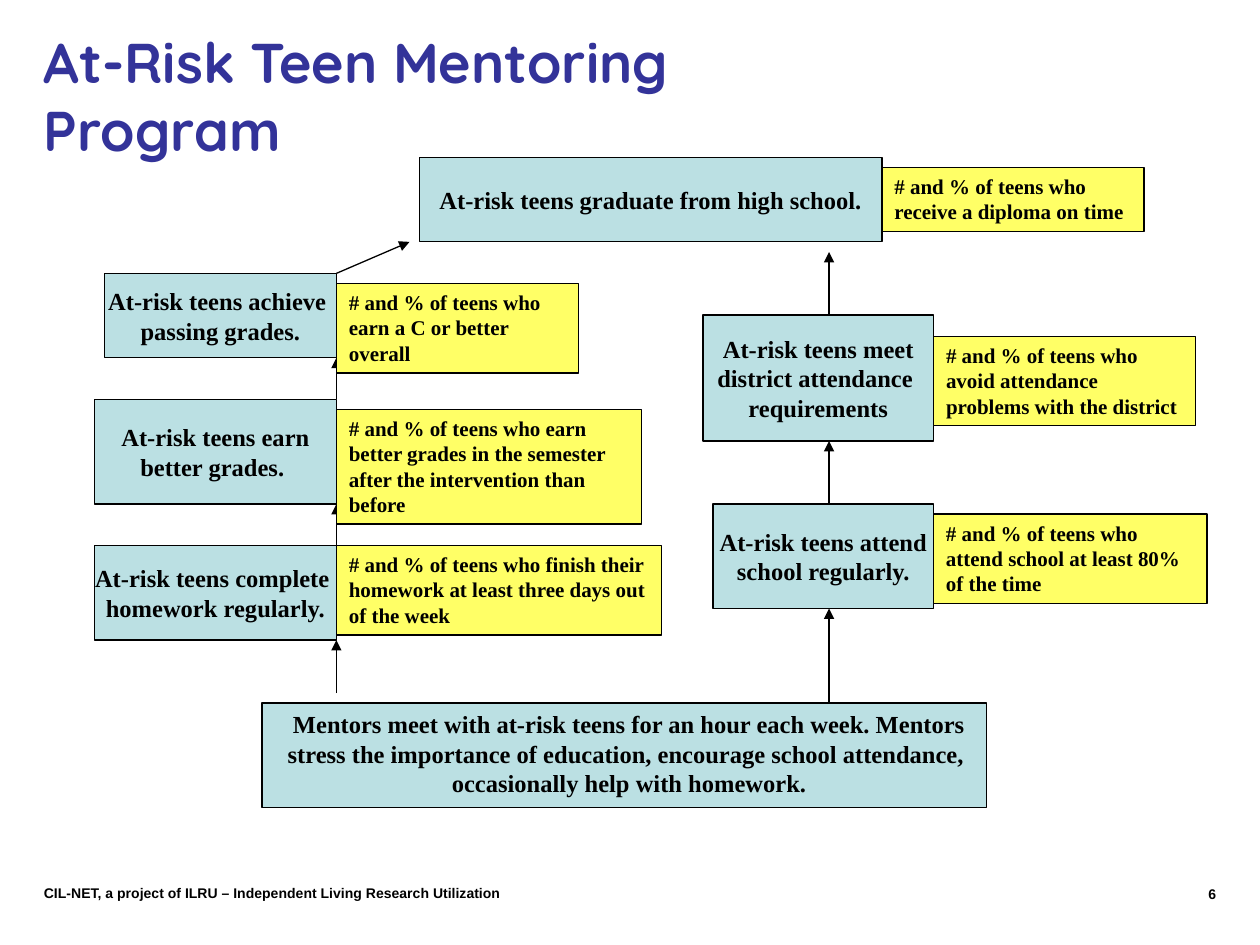
from dataclasses import dataclass

from lxml import etree
from pptx import Presentation
from pptx.dml.color import RGBColor
from pptx.enum import shapes, text
from pptx.oxml import ns
from pptx.util import Inches, Pt

BLACK = RGBColor(0x00, 0x00, 0x00)
INDIGO = RGBColor(0x33, 0x33, 0x99)
PALE_BLUE = RGBColor(0xBB, 0xE0, 0xE3)
YELLOW = RGBColor(0xFF, 0xFF, 0x66)

SERIF = "Times New Roman"
MIDDLE = text.MSO_ANCHOR.MIDDLE
TOP = text.MSO_ANCHOR.TOP
LEFT = text.PP_ALIGN.LEFT
CENTER = text.PP_ALIGN.CENTER
RIGHT = text.PP_ALIGN.RIGHT


@dataclass
class Box:
    left: float
    top: float
    width: float
    height: float

    @property
    def right(self):
        return self.left + self.width

    @property
    def bottom(self):
        return self.top + self.height

    def inside(self, left, top, width, height):
        return Box(self.left + left, self.top + top, width, height)

    def lengths(self):
        return [Inches(n) for n in (self.left, self.top, self.width, self.height)]


@dataclass
class Step:
    place: tuple
    lines: list
    note: str
    note_size: tuple
    note_drop: float = 0.08


def write(shape, lines, size, font=SERIF, color=BLACK, align=LEFT, anchor=TOP, wrap=True):
    frame = shape.text_frame
    frame.word_wrap = wrap
    frame.vertical_anchor = anchor
    frame.text = "\n".join(lines)
    for para in frame.paragraphs:
        para.alignment = align
        for span in para.runs:
            span.font.name = font
            span.font.size = Pt(size)
            span.font.bold = True
            span.font.color.rgb = color


def add_label(page, box, words, size, font, **style):
    label = page.shapes.add_textbox(*box.lengths())
    write(label, [words], size, font, **style)


def add_panel(page, box, fill):
    panel = page.shapes.add_shape(shapes.MSO_SHAPE.RECTANGLE, *box.lengths())
    panel.shadow.inherit = False
    panel.fill.solid()
    panel.fill.fore_color.rgb = fill
    panel.line.color.rgb = BLACK
    panel.line.width = Pt(0.75)
    return panel


def add_arrow(page, start, end):
    ends = [Inches(n) for n in (*start, *end)]
    arrow = page.shapes.add_connector(shapes.MSO_CONNECTOR.STRAIGHT, *ends)
    arrow.line.color.rgb = BLACK
    arrow.line.width = Pt(0.75)
    etree.SubElement(arrow.line._get_or_add_ln(), ns.qn("a:tailEnd"), type="triangle")
    etree.SubElement(arrow._element.spPr, ns.qn("a:effectLst"))


def add_step(page, box, step):
    panel = add_panel(page, box, PALE_BLUE)
    write(panel, step.lines, 14, align=CENTER, anchor=MIDDLE, wrap=False)


def add_note(page, box, step):
    note_box = Box(box.right, box.top + step.note_drop, *step.note_size)
    write(add_panel(page, note_box, YELLOW), [step.note], 12)


def add_pathway(page, box, steps, arrow_left, start_top, goal):
    places = [box.inside(*step.place) for step in steps]
    for place, step in zip(places, steps):
        add_step(page, place, step)
    column = box.left + arrow_left
    tails = [(column, top) for top in [start_top] + [place.top for place in places]]
    heads = [(column, place.bottom) for place in places] + [goal]
    for tail, head in zip(tails, heads):
        add_arrow(page, tail, head)
    for place, step in zip(places, steps):
        add_note(page, place, step)


def add_mentoring(page, box):
    panel = add_panel(page, box, PALE_BLUE)
    write(panel, [
        "Mentors meet with at-risk teens for an hour each week. Mentors "
        "stress the importance of education, encourage school attendance, ",
        "occasionally help with homework.",
    ], 14, align=CENTER)
    panel.text_frame.margin_right = Inches(0.02)


def add_footer(page, box):
    add_label(page, box.inside(0, 0, 5, 0.23),
              "CIL-NET, a project of ILRU – Independent Living Research Utilization",
              8, "Arial")
    add_label(page, box.inside(box.width - 0.67, 0.01, 0.67, 0.27), "6", 8, "Arial",
              align=RIGHT)


GRADUATION = Step((0, 0, 3.67, 0.67), ["At-risk teens graduate from high school."],
                  "# and % of teens who receive a diploma on time", (2.08, 0.51))

GRADE_STEPS = [
    Step((0, 2.16, 1.92, 0.75), ["At-risk teens complete ", "homework regularly."],
         "# and % of teens who finish their homework at least three days out of the week",
         (2.58, 0.71), 0),
    Step((0, 1, 1.92, 0.83), ["At-risk teens earn", "better grades. "],
         "# and % of teens who earn better grades in the semester after the "
         "intervention than before", (2.42, 0.91)),
    Step((0.08, 0, 1.84, 0.67), ["At-risk teens achieve ", "passing grades."],
         "# and % of teens who earn a C or better overall", (1.92, 0.71)),
]

ATTENDANCE_STEPS = [
    Step((0.08, 1.5, 1.75, 0.83), ["At-risk teens attend", "school regularly."],
         "# and % of teens who attend school at least 80% of the time", (2.17, 0.71)),
    Step((0, 0, 1.83, 1),
         ["At-risk teens meet", "district attendance ", "requirements"],
         "# and % of teens who avoid attendance problems with the district",
         (2.08, 0.71), 0.17),
]


def main():
    deck = Presentation()
    deck.slide_width = Inches(10)
    deck.slide_height = Inches(7.5)
    page = deck.slides.add_slide(deck.slide_layouts[6])

    add_footer(page, Box(0.25, 6.97, 9.5, 0.28))
    add_label(page, Box(0.25, 0.42, 6.17, 0.67), "At-Risk Teen Mentoring Program",
              32, "Quicksand", color=INDIGO, anchor=MIDDLE)

    mentoring = Box(2.08, 5.58, 5.75, 0.83)
    graduation = Box(3.33, 1.25, 3.67, 0.67)
    add_mentoring(page, mentoring)
    add_step(page, graduation, GRADUATION)
    add_note(page, graduation, GRADUATION)
    add_pathway(page, Box(0.75, 2.17, 4.5, 2.91), GRADE_STEPS, 1.92,
                mentoring.top - 0.08, (graduation.left - 0.08, graduation.bottom))
    add_pathway(page, Box(5.58, 2.5, 4, 2.33), ATTENDANCE_STEPS, 1,
                mentoring.top, (6.58, graduation.bottom + 0.08))

    deck.save("out.pptx")


if __name__ == "__main__":
    main()
